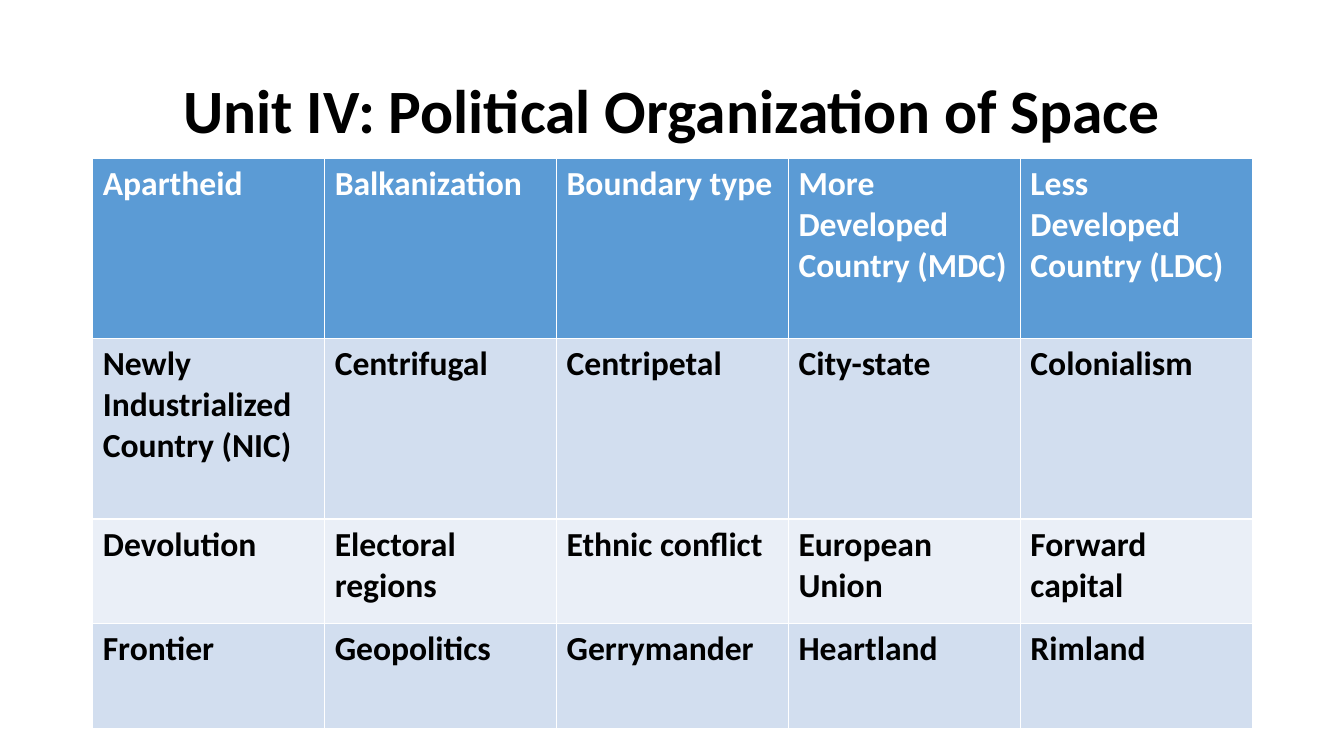
from pptx import Presentation
from pptx.dml.color import RGBColor
from pptx.enum.text import MSO_ANCHOR, PP_ALIGN
from pptx.util import Inches, Pt

CENTER = PP_ALIGN.CENTER
MIDDLE = MSO_ANCHOR.MIDDLE
FONT = "Calibri"
LEFT, WIDTH = Inches(0.92), Inches(11.5)

TERMS = [
    ["Apartheid", "Balkanization", "Boundary type",
     "More Developed Country (MDC)", "Less Developed Country (LDC)"],
    ["Newly Industrialized Country (NIC)", "Centrifugal", "Centripetal",
     "City-state", "Colonialism"],
    ["Devolution", "Electoral regions", "Ethnic conflict",
     "European Union", "Forward capital"],
    ["Frontier", "Geopolitics", "Gerrymander", "Heartland", "Rimland"],
]
ROW_HEIGHTS = [1.79, 1.79, 1.04, 1.04]
ROW_FILLS = ["5B9BD5", "D2DEEF", "EAEFF7", "D2DEEF"]
ROW_COLORS = ["FFFFFF", "000000", "000000", "000000"]


def rgb(value):
    return RGBColor.from_string(value)


def set_font(p, size, color):
    p.font.name = FONT
    p.font.size = Pt(size)
    p.font.bold = True
    p.font.color.rgb = rgb(color)


prs = Presentation()
prs.slide_width = Inches(13.33)
prs.slide_height = Inches(7.5)
s = prs.slides.add_slide(prs.slide_layouts[5])

title = s.shapes.title
title.left, title.top = LEFT, Inches(0.4)
title.width, title.height = WIDTH, Inches(1.45)
tf = title.text_frame
tf.text = "Unit IV: Political Organization of Space"
tf.vertical_anchor = MIDDLE
p = tf.paragraphs[0]
p.alignment = CENTER
p.line_spacing = 0.9
set_font(p, 44, "000000")

table = s.shapes.add_table(len(TERMS), len(TERMS[0]), LEFT, Inches(1.57),
                           WIDTH, Inches(sum(ROW_HEIGHTS))).table
for row, terms, height, fill, color in zip(table.rows, TERMS, ROW_HEIGHTS,
                                           ROW_FILLS, ROW_COLORS):
    row.height = Inches(height)
    for cell, term in zip(row.cells, terms):
        cell.text = term
        cell.fill.solid()
        cell.fill.fore_color.rgb = rgb(fill)
        set_font(cell.text_frame.paragraphs[0], 24, color)

prs.save("out.pptx")
